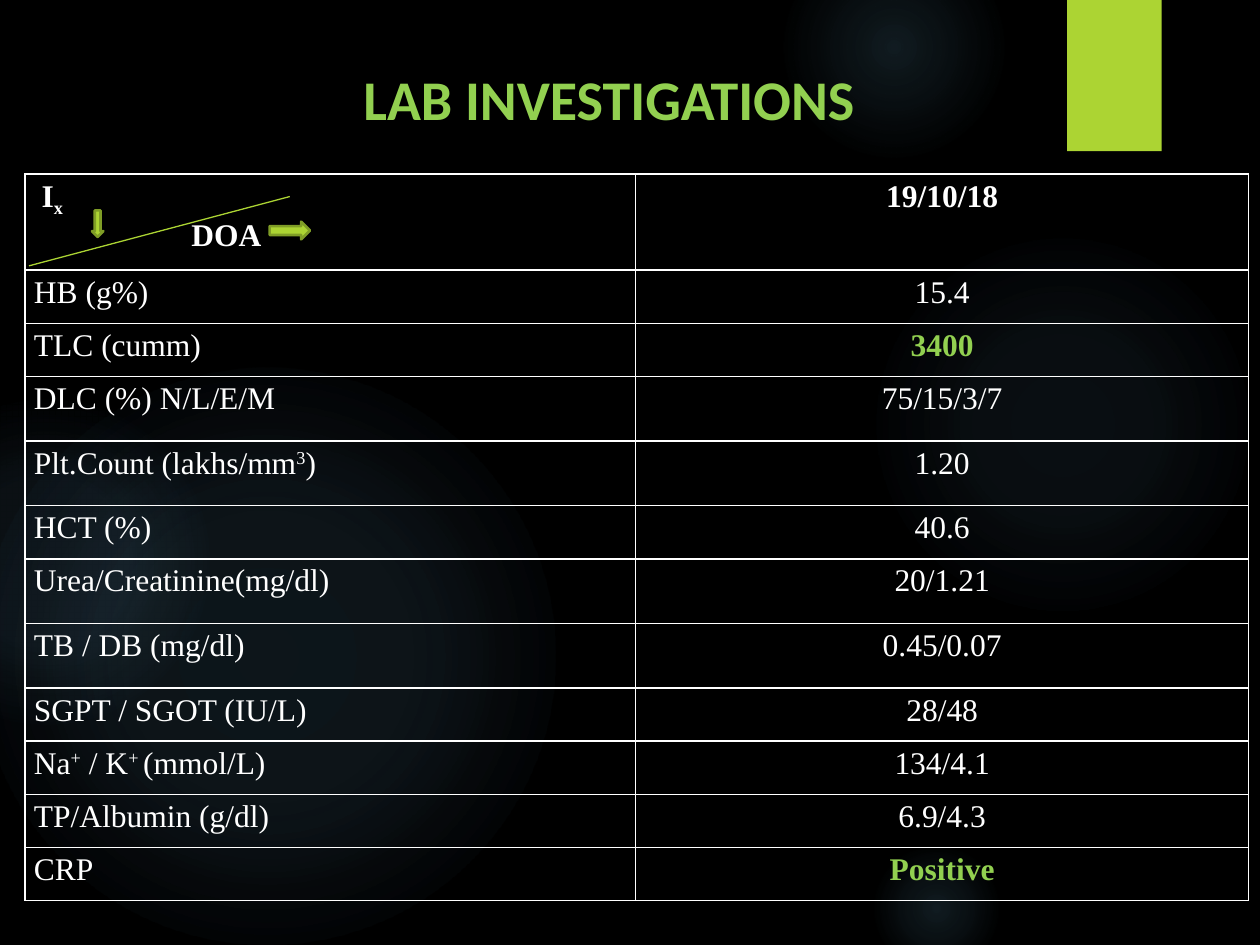
from lxml import etree
from pptx import Presentation
from pptx.dml.color import RGBColor
from pptx.enum.shapes import MSO_CONNECTOR, MSO_SHAPE
from pptx.enum.text import MSO_ANCHOR, MSO_AUTO_SIZE, PP_ALIGN
from pptx.oxml import parse_xml
from pptx.oxml.ns import nsdecls, qn
from pptx.util import Inches, Pt

OVAL, RECT = MSO_SHAPE.OVAL, MSO_SHAPE.RECTANGLE
DOWN, RIGHT = MSO_SHAPE.DOWN_ARROW, MSO_SHAPE.RIGHT_ARROW
LINE = MSO_CONNECTOR.STRAIGHT
LEFT, MID = PP_ALIGN.LEFT, PP_ALIGN.CENTER
TOP, FIXED = MSO_ANCHOR.TOP, MSO_AUTO_SIZE.NONE

COLS, ROWS = 100, 75
HUES = {"back": "000000", "text": "FFFFFF", "mark": "92D050",
        "lime": "ACD433", "edge": "7F9D26", "glow": "7AC4F0"}
SERIF, SANS = "Times New Roman", "Calibri"

GLOWS = [
    (68.9, 18.3, 30.8, [(0, 7), (36, 6), (69, 0)]),
    (62.2, -5, 17.5, [(0, 14), (36, 7), (73, 0)]),
    (68.9, 66.7, 10.8, [(0, 14), (36, 7), (66, 0)]),
    (-1.7, 29.2, 45.8, [(0, 11), (36, 10), (75, 0)]),
    (-9.2, 31.7, 25.8, [(0, 8), (36, 8), (72, 0)]),
]
SUB, SUP = -25, 30
LOW, TALL = 4.2, 5.1
TESTS = [
    (LOW, [("HB (g%)", 0)], "15.4", False),
    (LOW, [("TLC (cumm)", 0)], "3400", True),
    (TALL, [("DLC (%) N/L/E/M", 0)], "75/15/3/7", False),
    (TALL, [("Plt.Count (lakhs/mm", 0), ("3", SUP), (")", 0)], "1.20", False),
    (LOW, [("HCT (%)", 0)], "40.6", False),
    (TALL, [("Urea/Creatinine(mg/dl)", 0)], "20/1.21", False),
    (TALL, [("TB / DB (mg/dl)", 0)], "0.45/0.07", False),
    (LOW, [("SGPT / SGOT (IU/L)", 0)], "28/48", False),
    (LOW, [("Na", 0), ("+", SUP), (" / K", 0), ("+ ", SUP), ("(mmol/L)", 0)],
     "134/4.1", False),
    (LOW, [("TP/Albumin (g/dl)", 0)], "6.9/4.3", False),
    (LOW, [("CRP", 0)], "Positive", True),
]


def unit(n):
    return Inches(n / 10)


def units(*nums):
    return [unit(n) for n in nums]


def hue(name):
    return RGBColor.from_string(HUES[name])


def add_run(para, text, font, size, color, bold, base=0):
    run = para.add_run()
    run.text = text
    run.font.name, run.font.size, run.font.bold = font, Pt(size), bold
    run.font.color.rgb = hue(color)
    if base:
        run.font._element.set("baseline", str(base * 1000))


def add_form(slide, kind, box, fill="lime", edge=None):
    form = slide.shapes.add_shape(kind, *units(*box))
    form.shadow.inherit = False
    form.fill.solid()
    form.fill.fore_color.rgb = hue(fill)
    if edge:
        form.line.color.rgb = hue(edge)
        form.line.width = Pt(1.5)
    else:
        form.line.fill.background()
    return form


def add_glow(slide, box, stops):
    form = add_form(slide, OVAL, box, "glow")
    marks = "".join(
        f'<a:gs pos="{pos * 1000}"><a:srgbClr val="{HUES["glow"]}">'
        f'<a:alpha val="{alpha * 1000}"/></a:srgbClr></a:gs>'
        for pos, alpha in stops)
    grad = parse_xml(
        f'<a:gradFill {nsdecls("a")} rotWithShape="1"><a:gsLst>{marks}</a:gsLst>'
        '<a:path path="circle"><a:fillToRect l="50000" t="50000" r="50000" '
        'b="50000"/></a:path></a:gradFill>')
    props = form._element.spPr
    props.replace(props.find(qn("a:solidFill")), grad)


def add_decor(slide):
    slide.background.fill.solid()
    slide.background.fill.fore_color.rgb = hue("back")
    for left, top, size, stops in GLOWS:
        add_glow(slide, (left, top, size, size), stops)
    add_form(slide, RECT, (84.7, 0, 7.5, 12))


def add_title(slide, box):
    title = slide.shapes.title
    title.left, title.top, title.width, title.height = units(*box)
    frame = title.text_frame
    frame.auto_size, frame.vertical_anchor = FIXED, TOP
    para = frame.paragraphs[0]
    para.alignment = MID
    add_run(para, "LAB INVESTIGATIONS", SANS, 32, "mark", True)
    slide.shapes._spTree.append(title._element)


def style_cell(cell):
    cell.margin_left = cell.margin_right = Inches(0.07)
    cell.margin_top = cell.margin_bottom = Inches(0.04)
    props = cell._tc.get_or_add_tcPr()
    for side in ("lnL", "lnR", "lnT", "lnB"):
        props.append(parse_xml(
            f'<a:{side} {nsdecls("a")} w="12700"><a:solidFill>'
            f'<a:srgbClr val="{HUES["text"]}"/></a:solidFill></a:{side}>'))
    cell.fill.background()


def fill_para(para, runs, align=LEFT, color="text", bold=False, indent=0):
    para.alignment = align
    if indent:
        para._p.get_or_add_pPr().set("marL", str(unit(indent)))
    for text, base in runs:
        add_run(para, text, SERIF, 18, color, bold, base)


def add_table(slide, box):
    left, top, width, height = box
    table = slide.shapes.add_table(len(TESTS) + 1, 2, *units(*box)).table
    table.first_row = table.horz_banding = False
    for col, share in zip(table.columns, (0.499, 0.501)):
        col.width = unit(width * share)
    sizes = [7.6] + [test[0] for test in TESTS]
    for row, size in zip(table.rows, sizes):
        row.height = unit(height * size / sum(sizes))
    for cell in table.iter_cells():
        style_cell(cell)

    head = table.cell(0, 0).text_frame
    fill_para(head.paragraphs[0], [("I", 0), ("x", SUB)], bold=True, indent=0.6)
    fill_para(head.add_paragraph(), [("DOA", 0)], bold=True, indent=12.5)
    fill_para(table.cell(0, 1).text_frame.paragraphs[0], [("19/10/18", 0)],
              MID, bold=True)
    for num, (_, runs, value, flag) in enumerate(TESTS, 1):
        fill_para(table.cell(num, 0).text_frame.paragraphs[0], runs)
        fill_para(table.cell(num, 1).text_frame.paragraphs[0], [(value, 0)],
                  MID, "mark" if flag else "text", flag)


def add_marks(slide, box):
    left, top = box[:2]
    add_form(slide, DOWN, (left + 5.3, top + 2.9, 0.9, 2.1), edge="edge")
    line = slide.shapes.add_connector(
        LINE, *units(left + 0.3, top + 7.3, left + 21, top + 1.8))
    line.line.color.rgb = hue("lime")
    line.line.width = Pt(0.75)
    etree.SubElement(line._element.spPr, qn("a:effectLst"))
    add_form(slide, RIGHT, (left + 19.4, top + 3.8, 3.2, 1.4), edge="edge")


def main():
    deck = Presentation()
    deck.slide_width, deck.slide_height = units(COLS, ROWS)
    slide = deck.slides.add_slide(deck.slide_layouts[5])
    grid = (2, 13.8, 97.1, 57.7)
    add_decor(slide)
    add_title(slide, (2, 4.6, 92.7, 5.4))
    add_table(slide, grid)
    add_marks(slide, grid)
    deck.save("out.pptx")


if __name__ == "__main__":
    main()
